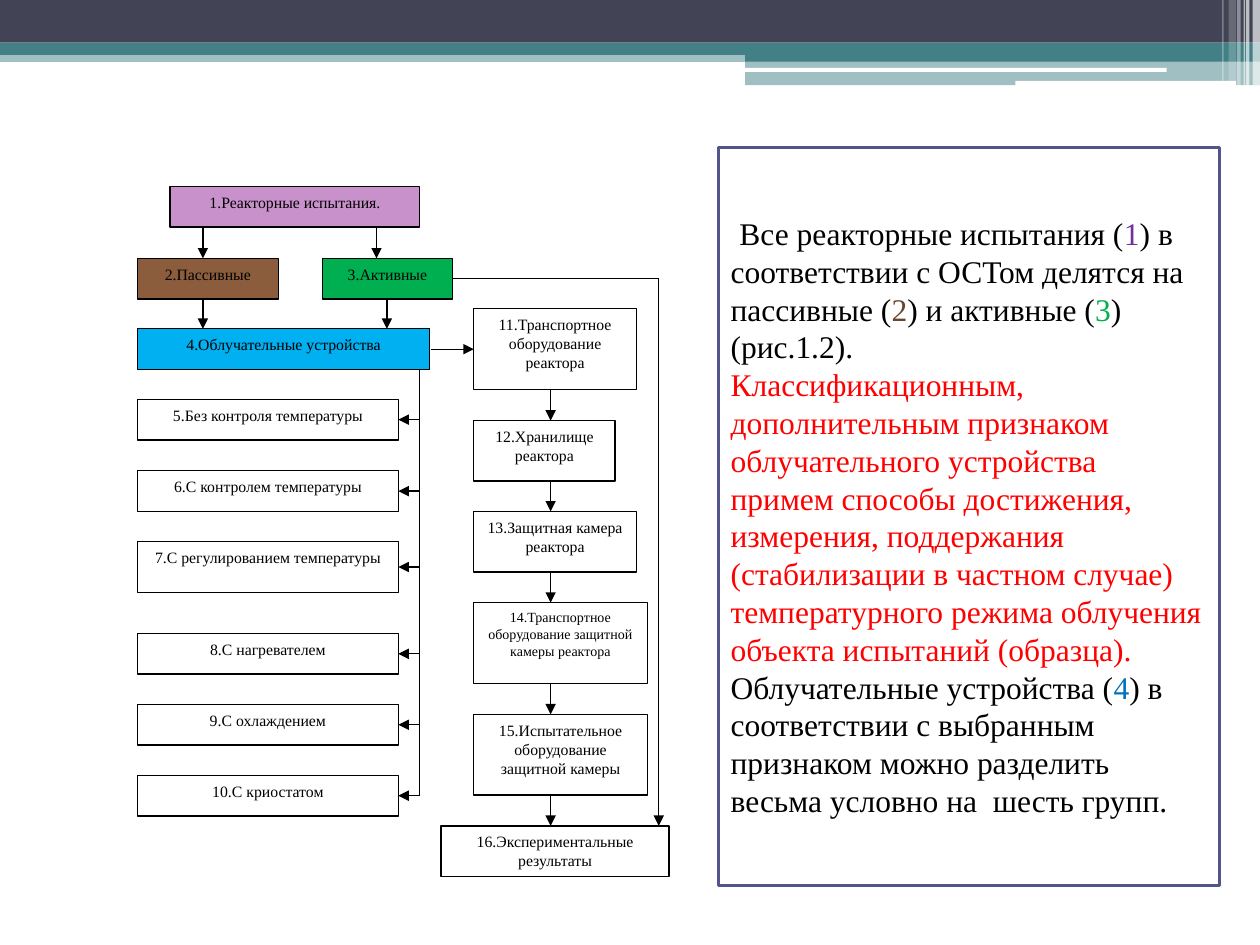
from itertools import pairwise

from pptx import Presentation
from pptx.dml.color import RGBColor
from pptx.enum.shapes import MSO_CONNECTOR, MSO_SHAPE
from pptx.enum.text import MSO_ANCHOR, PP_ALIGN
from pptx.oxml.xmlchemy import OxmlElement
from pptx.util import Cm, Pt

BLACK = "000000"
WHITE = "FFFFFF"
RED = "FF0000"
NAVY = "424456"
TEAL = "438086"
SERIF = "Times New Roman"

BANDS = [
    (0, 1.02, 25.4, 0.23, TEAL, 50),
    (0, 0, 25.4, 0.86, NAVY, 100),
    (0, 0.86, 25.4, 0.25, TEAL, 100),
    (15.02, 0.99, 10.38, 0.25, TEAL, 100),
    (15.02, 1.22, 10.38, 0.5, TEAL, 50),
]
PILLS = [(15.01, 1.37, 8.51, 0.08), (20.47, 1.63, 4.45, 0.1)]
STRIPES = [
    (25.25, 0.15, 1.73, 65),
    (25.12, 0.07, 1.73, 65),
    (25.07, 0.03, 1.73, 60),
    (24.94, 0.07, 1.73, 40),
    (24.77, 0.15, 1.63, 20),
    (24.64, 0.03, 1.63, 30),
]

TOP_BOXES = [
    ("1.Реакторные испытания.", 3.43, 3.76, 5.03, "C991CB"),
    ("2.Пассивные", 2.77, 5.21, 2.84, "8B5D3D"),
    ("3.Активные", 6.5, 5.21, 2.62, "00B050"),
    ("4.Облучательные устройства", 2.77, 6.63, 5.89, "00B0F0"),
]
DEVICES = [
    ("5.Без контроля температуры", 8.05, 0.82),
    ("6.С контролем температуры", 9.49, 0.82),
    ("7.С регулированием температуры", 10.92, 1.02),
    ("8.С нагревателем", 12.77, 0.82),
    ("9.С охлаждением", 14.2, 0.82),
    ("10.С криостатом", 15.63, 0.82),
]
CHAIN = [
    ("11.Транспортное оборудование реактора", 9.55, 6.22, 3.28, 1.63, 9),
    ("12.Хранилище реактора", 9.55, 8.48, 2.85, 1.22, 9),
    ("13.Защитная камера реактора", 9.55, 10.31, 3.28, 1.22, 9),
    ("14.Транспортное оборудование защитной камеры реактора", 9.55, 12.15, 3.5, 1.63, 8),
    ("15.Испытательное оборудование защитной камеры", 9.55, 14.4, 3.5, 1.63, 9),
    ("16.Экспериментальные результаты", 8.89, 16.65, 4.6, 1.02, 9),
]
ARROWS = [
    (4.09, 4.58, 4.09, 5.21),
    (7.59, 4.58, 7.59, 5.21),
    (4.09, 6.03, 4.09, 6.63),
    (7.8, 6.03, 7.8, 6.63),
    (8.68, 7.04, 9.55, 7.04),
    (13.28, 5.61, 13.28, 16.65),
]
SUMMARY = [
    [
        ("Все реакторные испытания (", BLACK),
        ("1", "7030A0"),
        (") в соответствии с ОСТом делятся на пассивные (", BLACK),
        ("2", "68462E"),
        (") и активные (", BLACK),
        ("3", "00B050"),
        (") (рис.1.2).", BLACK),
    ],
    [
        (
            "Классификационным, дополнительным признаком облучательного "
            "устройства примем способы достижения, измерения, поддержания "
            "(стабилизации в частном случае) температурного режима облучения "
            "объекта испытаний (образца).",
            RED,
        ),
    ],
    [
        ("Облучательные устройства (", BLACK),
        ("4", "0070C0"),
        (
            ") в соответствии с выбранным признаком можно разделить "
            "весьма условно на  шесть групп.",
            BLACK,
        ),
    ],
]


def colour(value):
    return RGBColor.from_string(value)


def add_text(para, text, size=18, font=SERIF, color=BLACK):
    span = para.add_run()
    span.text = text
    span.font.size = Pt(size)
    span.font.name = font
    span.font.color.rgb = colour(color)


def add_box(page, left, top, width, height, fill, line=None, weight=0.75,
            alpha=100, kind=MSO_SHAPE.RECTANGLE):
    box = page.shapes.add_shape(kind, Cm(left), Cm(top), Cm(width), Cm(height))
    box.shadow.inherit = False
    box.fill.solid()
    box.fill.fore_color.rgb = colour(fill)
    if alpha < 100:
        opacity = OxmlElement("a:alpha")
        opacity.set("val", str(alpha * 1000))
        box.fill._xPr.find(".//{*}srgbClr").append(opacity)
    if line:
        box.line.color.rgb = colour(line)
        box.line.width = Pt(weight)
    else:
        box.line.fill.background()
    return box


def add_step(page, text, left, top, width, height=0.82, fill=WHITE, size=9):
    box = add_box(page, left, top, width, height, fill, line=BLACK)
    frame = box.text_frame
    frame.word_wrap = True
    frame.vertical_anchor = MSO_ANCHOR.TOP
    para = frame.paragraphs[0]
    para.alignment = PP_ALIGN.CENTER
    para.space_after = Pt(10)
    add_text(para, text, size=size)


def add_line(page, x1, y1, x2, y2, arrow=True):
    line = page.shapes.add_connector(
        MSO_CONNECTOR.STRAIGHT, Cm(x1), Cm(y1), Cm(x2), Cm(y2))
    line.line.color.rgb = colour(BLACK)
    line.line.width = Pt(0.75)
    if arrow:
        head = OxmlElement("a:tailEnd")
        head.set("type", "triangle")
        line.line._get_or_add_ln().append(head)
    line._element.spPr.append(OxmlElement("a:effectLst"))


def add_header(page):
    for left, top, width, height, fill, alpha in BANDS:
        add_box(page, left, top, width, height, fill, alpha=alpha)
    for pill in PILLS:
        add_box(page, *pill, WHITE, kind=MSO_SHAPE.ROUNDED_RECTANGLE)
    for left, width, height, alpha in STRIPES:
        add_box(page, left, 0, width, height, WHITE, alpha=alpha)


def add_flowchart(page):
    for text, left, top, width, fill in TOP_BOXES:
        add_step(page, text, left, top, width, fill=fill)
    for text, top, height in DEVICES:
        add_step(page, text, 2.77, top, 5.26, height)
        middle = top + height / 2
        add_line(page, 8.46, middle, 8.03, middle)
    add_line(page, 8.46, 7.45, 8.46, middle, arrow=False)
    for text, left, top, width, height, size in CHAIN:
        add_step(page, text, left, top, width, height, size=size)
    for upper, lower in pairwise(CHAIN):
        add_line(page, 11.1, upper[2] + upper[4], 11.1, lower[2])
    add_line(page, 9.12, 5.61, 13.28, 5.61, arrow=False)
    for arrow in ARROWS:
        add_line(page, *arrow)


def add_summary(page):
    box = add_box(page, 14.48, 2.97, 10.11, 14.88, WHITE, line="53548A", weight=1.5)
    frame = box.text_frame
    frame.word_wrap = True
    frame.vertical_anchor = MSO_ANCHOR.MIDDLE
    add_text(frame.paragraphs[0], " ", font="TeX Gyre Schola")
    for index, spans in enumerate(SUMMARY):
        para = frame.add_paragraph() if index else frame.paragraphs[0]
        para.alignment = PP_ALIGN.LEFT
        for text, color in spans:
            add_text(para, text, color=color)


def main():
    deck = Presentation()
    deck.slide_width = Cm(25.4)
    deck.slide_height = Cm(19.05)
    page = deck.slides.add_slide(deck.slide_layouts[6])
    add_header(page)
    add_flowchart(page)
    add_summary(page)
    deck.save("out.pptx")


if __name__ == "__main__":
    main()
